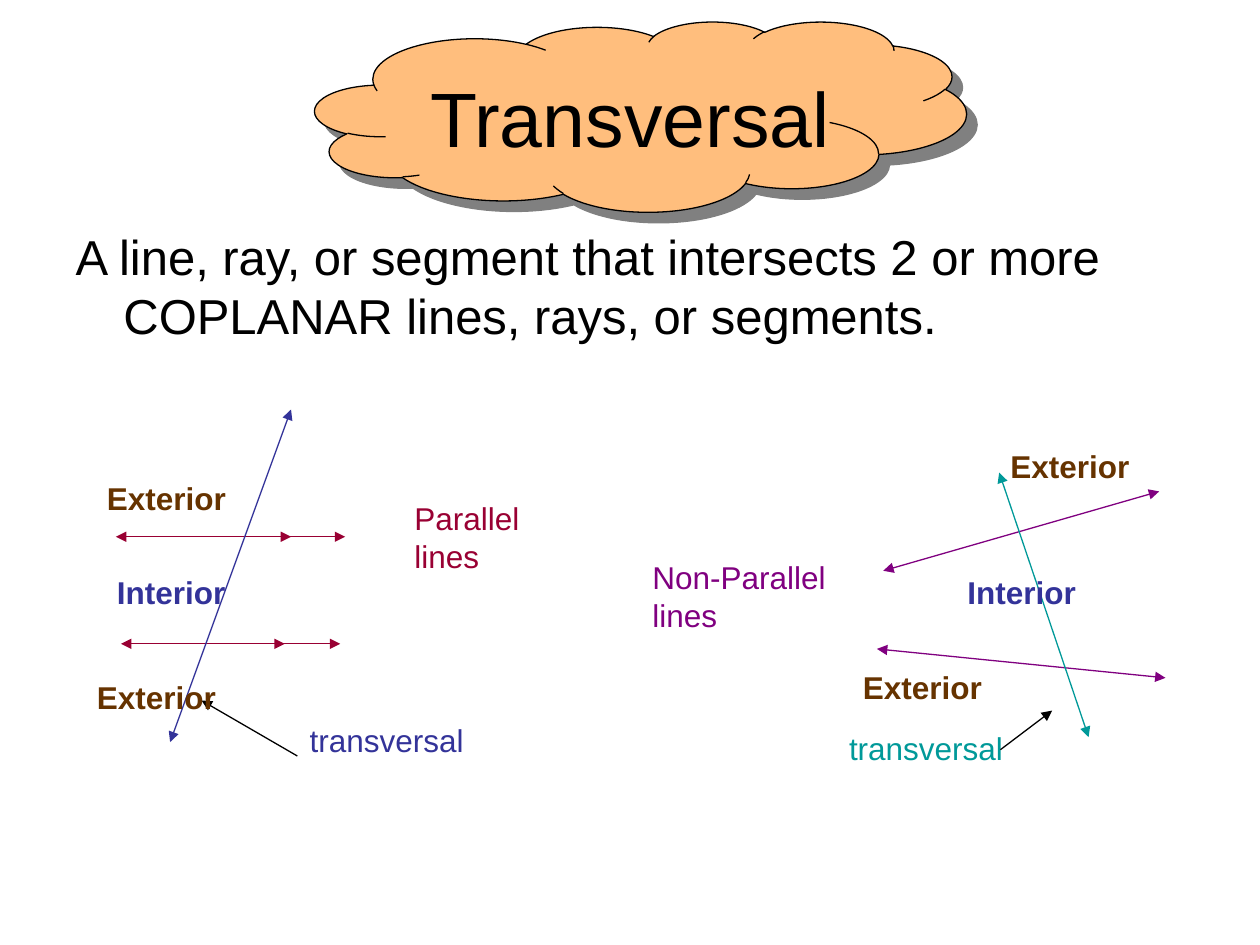
from lxml.etree import SubElement
from pptx import Presentation
from pptx.dml.color import RGBColor
from pptx.enum.shapes import MSO_CONNECTOR, MSO_SHAPE
from pptx.enum.text import MSO_ANCHOR, MSO_AUTO_SIZE, PP_ALIGN
from pptx.oxml.ns import qn
from pptx.util import Inches, Pt

BLACK = RGBColor(0x00, 0x00, 0x00)
WHITE = RGBColor(0xFF, 0xFF, 0xFF)
ORANGE = RGBColor(0xFF, 0xBE, 0x7D)
CRIMSON = RGBColor(0x99, 0x00, 0x33)
BLUE = RGBColor(0x33, 0x33, 0x99)
PURPLE = RGBColor(0x80, 0x00, 0x80)
TEAL = RGBColor(0x00, 0x99, 0x99)
BROWN = RGBColor(0x66, 0x33, 0x00)

FONT = "Arial"
LINE_WIDTH = Pt(0.75)
COLUMNS, ROWS = 100, 75
CELL = Inches(10) // COLUMNS


def grid(*cells):
    """Turn columns and rows of the slide grid into lengths."""
    return [round(cell * CELL) for cell in cells]


def style_text(frame, size, color, bold=False):
    for paragraph in frame.paragraphs:
        for run in paragraph.runs:
            run.font.name = FONT
            run.font.size = Pt(size)
            run.font.bold = bold
            run.font.color.rgb = color


def fill_placeholder(placeholder, box, text, size):
    placeholder.left, placeholder.top, placeholder.width, placeholder.height = grid(*box)
    frame = placeholder.text_frame
    frame.text = text
    frame.auto_size = MSO_AUTO_SIZE.NONE
    style_text(frame, size, BLACK)
    return frame


def add_cloud(slide, box):
    """Put a cloud with a hard grey shadow behind the title."""
    cloud = slide.shapes.add_shape(MSO_SHAPE.CLOUD, *grid(*box))
    cloud.fill.solid()
    cloud.fill.fore_color.rgb = ORANGE
    cloud.line.color.rgb = BLACK
    cloud.line.width = LINE_WIDTH
    effects = SubElement(cloud._element.spPr, qn("a:effectLst"))
    shadow = SubElement(effects, qn("a:outerShdw"), dist=str(Pt(8.5)),
                        dir=str(45 * 60000), algn="ctr", rotWithShape="0")
    SubElement(shadow, qn("a:srgbClr"), val="808080")
    slide.shapes._spTree.insert(2, cloud._element)


def add_arrow(slide, start, end, color, both_ends=True):
    arrow = slide.shapes.add_connector(MSO_CONNECTOR.STRAIGHT, *grid(*start, *end))
    arrow.line.color.rgb = color
    arrow.line.width = LINE_WIDTH
    outline = arrow.line._get_or_add_ln()
    for tag in ("a:headEnd", "a:tailEnd") if both_ends else ("a:tailEnd",):
        SubElement(outline, qn(tag), type="triangle")
    SubElement(arrow._element.spPr, qn("a:effectLst"))


def add_label(slide, box, text, color, bold=False):
    label = slide.shapes.add_textbox(*grid(*box))
    frame = label.text_frame
    frame.word_wrap = True
    frame.text = text
    style_text(frame, 18, color, bold)
    return label


def add_parallel_diagram(slide):
    center = 18.3
    # Each parallel line carries an extra arrowhead right of its middle
    for row, half_length, mark_end in ((42.6, 9.1, 23.1), (51.1, 8.7, 22.6)):
        add_arrow(slide, (mark_end - 0.9, row), (mark_end, row), CRIMSON, both_ends=False)
        add_arrow(slide, (center - half_length, row), (center + half_length, row), CRIMSON)
    add_label(slide, (31.9, 39.1, 11.4, 7), "Parallel lines", CRIMSON)

    # Transversal and its pointer
    add_arrow(slide, (23.1, 32.5), (13.5, 58.9), BLUE)
    transversal = add_label(slide, (23.6, 56.7, 15.2, 4.1), "transversal", BLUE)
    transversal.line.color.rgb = WHITE
    transversal.line.width = LINE_WIDTH
    add_arrow(slide, (23.6, 60), (16, 55.6), BLACK, both_ends=False)


def add_non_parallel_diagram(slide):
    add_arrow(slide, (70.1, 45.3), (92, 39), PURPLE)
    add_arrow(slide, (69.6, 51.5), (92.5, 53.8), PURPLE)
    add_label(slide, (50.8, 43.8, 16.4, 7), "Non-Parallel lines", PURPLE)

    # Transversal and its pointer
    add_arrow(slide, (79.3, 37.5), (86.4, 58.5), TEAL)
    add_label(slide, (66.4, 57.4, 16.3, 4), "transversal", TEAL)
    add_arrow(slide, (79.4, 59.5), (83.5, 56.4), BLACK, both_ends=False)


def add_region_labels(slide):
    for column, row in ((8.3, 45), (75.8, 45)):
        add_label(slide, (column, row, 20, 4), "Interior", BLUE, bold=True)
    for column, row in ((6.7, 53.3), (7.5, 37.5), (67.5, 52.5), (79.2, 35)):
        add_label(slide, (column, row, 15.8, 4), "Exterior", BROWN, bold=True)


def main():
    presentation = Presentation()
    presentation.slide_width = COLUMNS * CELL
    presentation.slide_height = ROWS * CELL
    slide = presentation.slides.add_slide(presentation.slide_layouts[1])

    # Title on its cloud
    add_cloud(slide, (25, 1.7, 51.7, 15.1))
    title = fill_placeholder(slide.shapes.title, (5, 3, 90, 12.5), "Transversal", 44)
    title.vertical_anchor = MSO_ANCHOR.MIDDLE
    title.paragraphs[0].alignment = PP_ALIGN.CENTER

    # Definition with a hanging indent and no bullet
    definition = fill_placeholder(
        slide.placeholders[1], (5, 17.5, 90, 12.5),
        "A line, ray, or segment that intersects 2 or more "
        "COPLANAR lines, rays, or segments.", 28)
    properties = definition.paragraphs[0]._p.get_or_add_pPr()
    properties.set("marL", str(Inches(0.38)))
    properties.set("indent", str(-Inches(0.38)))
    SubElement(properties, qn("a:buNone"))

    # Diagrams
    add_parallel_diagram(slide)
    add_non_parallel_diagram(slide)
    add_region_labels(slide)

    presentation.save("out.pptx")


if __name__ == "__main__":
    main()
